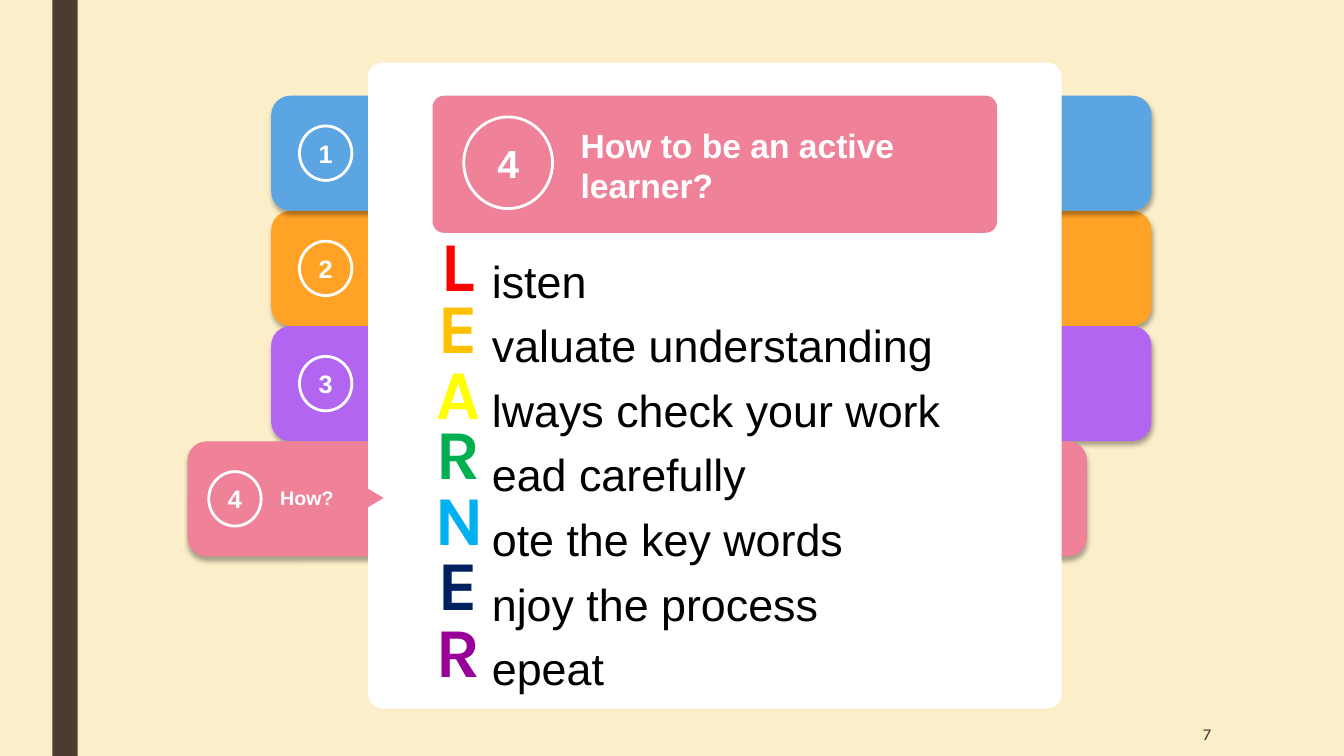
from lxml.etree import SubElement
from pptx import Presentation
from pptx.dml.color import RGBColor
from pptx.enum.shapes import MSO_SHAPE
from pptx.enum.text import MSO_ANCHOR, PP_ALIGN
from pptx.oxml.ns import qn
from pptx.util import Inches, Pt

CREAM = RGBColor(0xFB, 0xEE, 0xC9)
BROWN = RGBColor(0x4E, 0x3B, 0x30)
WHITE = RGBColor(0xFF, 0xFF, 0xFF)
BLACK = RGBColor(0, 0, 0)
BLUE = RGBColor(0x5B, 0xA5, 0xE3)
ORANGE = RGBColor(0xFF, 0xA2, 0x25)
VIOLET = RGBColor(0xB2, 0x65, 0xF1)
PINK = RGBColor(0xEF, 0x81, 0x99)
RED = RGBColor(0xFF, 0, 0)
GOLD = RGBColor(0xFF, 0xC0, 0)
YELLOW = RGBColor(0xFF, 0xFF, 0)
GREEN = RGBColor(0, 0xB0, 0x50)
SKY = RGBColor(0, 0xB0, 0xF0)
NAVY = RGBColor(0, 0x20, 0x60)
PURPLE = RGBColor(0x99, 0, 0x99)

TAB_TOP = 0.95
TAB_STEP = 1.143
LETTER_MID = 4.545

TABS = [
    ("2", 1, 2.69, 8.73, 2.97, ORANGE),
    ("3", 2, 2.69, 8.73, 2.97, VIOLET),
    ("4", 3, 1.86, 8.92, 2.07, PINK),
    ("1", 0, 2.69, 8.73, 2.97, BLUE),
]
LEARNER = [
    ("L", "isten", 2.15, RED),
    ("E", "valuate understanding", 2.76, GOLD),
    ("A", "lways check your work", 3.42, YELLOW),
    ("R", "ead carefully", 4.01, GREEN),
    ("N", "ote the key words", 4.67, SKY),
    ("E", "njoy the process", 5.31, NAVY),
    ("R", "epeat", 5.98, PURPLE),
]


def add_block(slide, kind, left, top, width, height, color, round=None):
    block = slide.shapes.add_shape(
        kind, Inches(left), Inches(top), Inches(width), Inches(height))
    block.shadow.inherit = False
    block.fill.solid()
    block.fill.fore_color.rgb = color
    block.line.fill.background()
    if round is not None:
        block.adjustments[0] = round
    return block


def add_shade(block):
    effects = block._element.spPr.find(qn("a:effectLst"))
    shade = SubElement(effects, qn("a:outerShdw"), blurRad=str(Pt(3.5)),
                       dist=str(Pt(2.2)), dir="5400000", algn="t", rotWithShape="0")
    color = SubElement(shade, qn("a:srgbClr"), val="000000")
    SubElement(color, qn("a:alpha"), val="32000")


def set_text(frame, lines, size, color, font="Arial", bold=False,
             align=PP_ALIGN.LEFT, space=None):
    for index, line in enumerate(lines):
        para = frame.add_paragraph() if index else frame.paragraphs[0]
        para.text = line
        para.alignment = align
        para.line_spacing = space
        para.font.size = Pt(size)
        para.font.name = font
        para.font.bold = bold
        para.font.color.rgb = color


def add_text(slide, lines, left, top, width, height, size, color,
             anchor=MSO_ANCHOR.MIDDLE, wrap=True, **style):
    box = slide.shapes.add_textbox(
        Inches(left), Inches(top), Inches(width), Inches(height))
    frame = box.text_frame
    frame.word_wrap = wrap
    frame.vertical_anchor = anchor
    set_text(frame, lines, size, color, **style)


def add_ring(slide, label, left, top, width, height, size):
    ring = add_block(slide, MSO_SHAPE.OVAL, left, top, width, height, WHITE)
    ring.fill.background()
    ring.line.color.rgb = WHITE
    ring.line.width = Pt(2)
    ring.text_frame.vertical_anchor = MSO_ANCHOR.MIDDLE
    set_text(ring.text_frame, [label], size, WHITE, bold=True, align=PP_ALIGN.CENTER)


def add_tab(slide, label, row, left, width, ring, color):
    top = TAB_TOP + row * TAB_STEP
    tab = add_block(slide, MSO_SHAPE.ROUNDED_RECTANGLE, left, top, width, 1.14, color, 0.167)
    add_shade(tab)
    add_ring(slide, label, ring, top + 0.3, 0.52, 0.54, 18)


def add_card(slide):
    add_block(slide, MSO_SHAPE.ROUNDED_RECTANGLE, 3.65, 0.62, 6.88, 6.41, WHITE, 0.023)
    arrow = add_block(slide, MSO_SHAPE.ISOSCELES_TRIANGLE, 3.63, 4.86, 0.19, 0.16, PINK)
    arrow.rotation = 90
    add_block(slide, MSO_SHAPE.ROUNDED_RECTANGLE, 4.29, 0.95, 5.6, 1.36, PINK, 0.084)
    add_ring(slide, "4", 4.6, 1.16, 0.88, 0.91, 28)
    add_text(slide, ["How to be an active learner?"], 5.66, 1.1, 3.99, 1.07,
             24, WHITE, bold=True)


def add_learner(slide):
    words = [word for _, word, _, _ in LEARNER]
    add_text(slide, words, 4.78, 2.36, 5.11, 4.62, 32, BLACK,
             anchor=MSO_ANCHOR.TOP, space=1.2)
    for letter, _, top, color in LEARNER:
        add_text(slide, [letter], LETTER_MID - 0.33, top, 0.66, 0.94, 50, color,
                 anchor=MSO_ANCHOR.TOP, wrap=False, font="Karla", bold=True,
                 align=PP_ALIGN.CENTER)


def main():
    deck = Presentation()
    deck.slide_width = Inches(13.33)
    deck.slide_height = Inches(7.5)
    slide = deck.slides.add_slide(deck.slide_layouts[6])
    slide.background.fill.solid()
    slide.background.fill.fore_color.rgb = CREAM
    add_block(slide, MSO_SHAPE.RECTANGLE, 0.52, 0, 0.25, 7.5, BROWN)
    add_text(slide, ["7"], 10.36, 7.06, 1.75, 0.44, 12, BROWN,
             font="Karla", align=PP_ALIGN.RIGHT)
    for tab in TABS:
        add_tab(slide, *tab)
    add_text(slide, ["How?"], 2.68, 4.74, 0.91, 0.4, 14, WHITE, bold=True)
    add_card(slide)
    add_learner(slide)
    deck.save("out.pptx")


if __name__ == "__main__":
    main()
